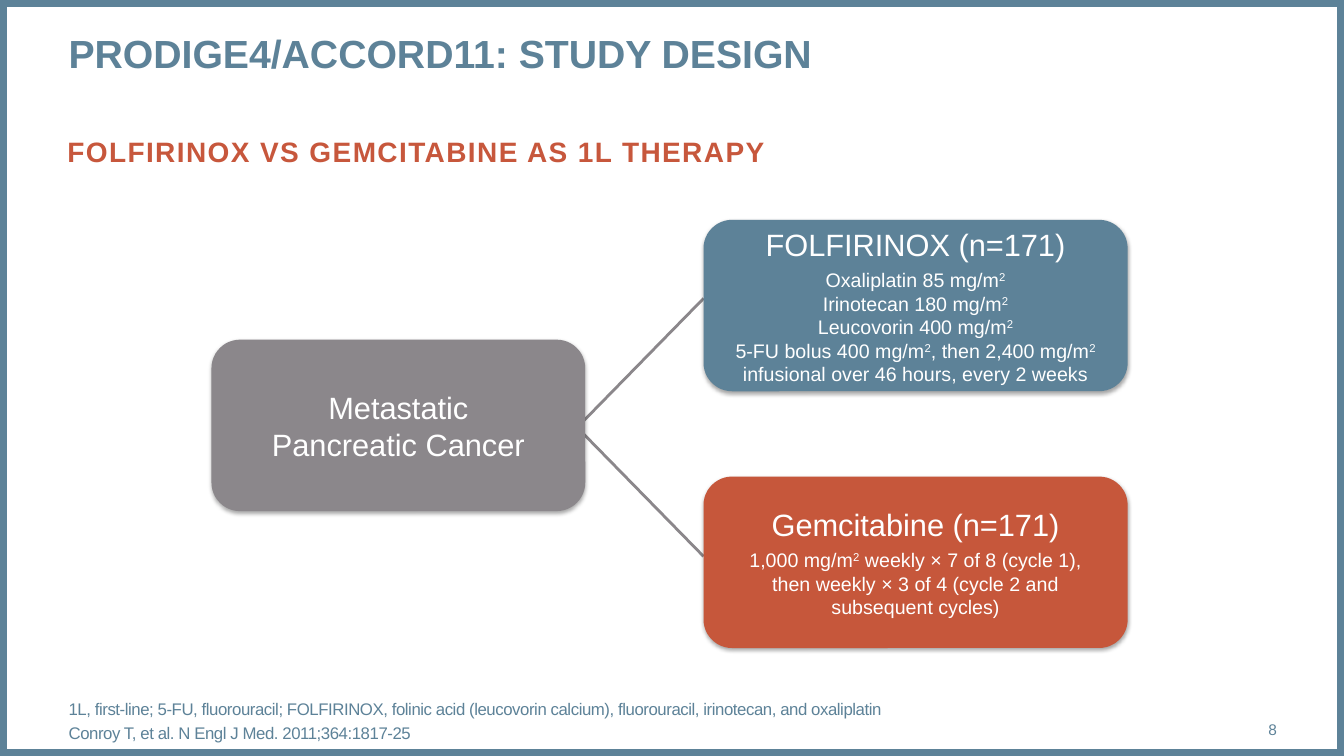
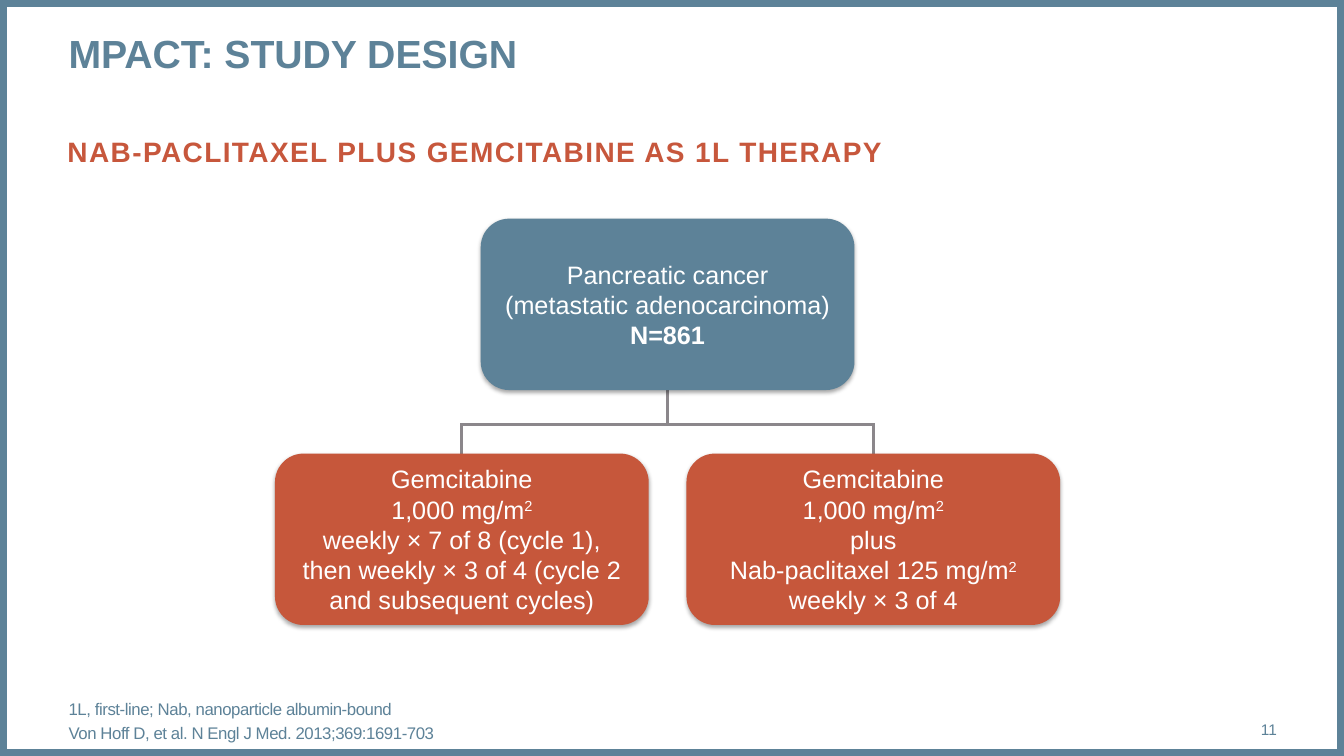
"""Build two study-design slides for pancreatic cancer trials."""
import pptx
import pptx.dml.color
import pptx.enum.shapes
import pptx.enum.text
import pptx.oxml
import pptx.oxml.ns
import pptx.util

Cm, Pt = pptx.util.Cm, pptx.util.Pt
ALIGN, ANCHOR = pptx.enum.text.PP_ALIGN, pptx.enum.text.MSO_ANCHOR
SHAPE = pptx.enum.shapes.MSO_SHAPE
hex_color = pptx.dml.color.RGBColor.from_string

BLUE, RUST, HEADING, GRAY, WHITE = "5D8298", "C6573B", "C7573C", "8B878B", "FFFFFF"
WIDTH, HEIGHT = 33.87, 19.05
BOX_WIDTH, ARM_WIDTH, BOX_HEIGHT = 9.42, 10.69, 4.32
SHADOW = (
    f"<a:effectLst {pptx.oxml.ns.nsdecls('a')}>"
    '<a:outerShdw blurRad="39370" dist="22860" dir="5400000" rotWithShape="0">'
    '<a:srgbClr val="000000"><a:alpha val="35000"/></a:srgbClr>'
    "</a:outerShdw></a:effectLst>"
)
NO_EFFECT = f"<a:effectLst {pptx.oxml.ns.nsdecls('a')}/>"


def write(frame, lines, size, color, align=ALIGN.LEFT, anchor=ANCHOR.MIDDLE, tracking=0):
    """Write (text, style) lines, where text between carets is superscript."""
    frame.word_wrap = True
    frame.vertical_anchor = anchor
    for index, (text, style) in enumerate(lines):
        paragraph = frame.add_paragraph() if index else frame.paragraphs[0]
        paragraph.alignment = align
        paragraph.space_before = Pt(style.get("before", 0))
        for position, part in enumerate(text.split("^")):
            if not part:
                continue
            run = paragraph.add_run()
            run.text = part
            run.font.name = "Arial"
            run.font.size = Pt(style.get("size", size))
            run.font.bold = style.get("bold", False)
            run.font.color.rgb = hex_color(color)
            if position % 2:
                run.font._element.set("baseline", "30000")
            if tracking:
                run.font._element.set("spc", str(tracking))


def add_label(slide, left, top, width, height, lines, size, color, **layout):
    """Add a text box without margins."""
    frame = slide.shapes.add_textbox(Cm(left), Cm(top), Cm(width), Cm(height)).text_frame
    frame.margin_left = frame.margin_top = frame.margin_right = frame.margin_bottom = 0
    write(frame, lines, size, color, **layout)


DOSE = {"size": 14}
FIRST_DOSE = {"size": 14, "before": 4}
BOLD = {"bold": True}

arm_left = 17.73
single_lefts = [6.93, 17.3]
single_centers = [left + BOX_WIDTH / 2 for left in single_lefts]
trunk = sum(single_centers) / 2
branch_top, branch_bottom = 10.69, 11.6

studies = [
    {
        "title": "PRODIGE4/ACCORD11: STUDY DESIGN",
        "heading": "FOLFIRINOX VS GEMCITABINE AS 1L THERAPY",
        "notes": [
            "1L, first-line; 5-FU, fluorouracil; FOLFIRINOX, folinic acid (leucovorin calcium), "
            "fluorouracil, irinotecan, and oxaliplatin",
            "Conroy T, et al. N Engl J Med. 2011;364:1817-25",
        ],
        "number": "8",
        "size": 22,
        "links": [
            (14.35, 10.97, arm_left, 7.52),
            (14.35, 10.57, arm_left, 14.02),
        ],
        "groups": [
            (5.33, 8.56, BOX_WIDTH, GRAY, [("Metastatic", {}), ("Pancreatic Cancer", {})]),
            (arm_left, 12.01, ARM_WIDTH, RUST, [
                ("Gemcitabine (n=171)", {}),
                ("1,000 mg/m^2^ weekly × 7 of 8 (cycle 1),", FIRST_DOSE),
                ("then weekly × 3 of 4 (cycle 2 and subsequent cycles)", DOSE),
            ]),
            (arm_left, 5.54, ARM_WIDTH, BLUE, [
                ("FOLFIRINOX (n=171)", {}),
                ("Oxaliplatin 85 mg/m^2^", FIRST_DOSE),
                ("Irinotecan 180 mg/m^2^", DOSE),
                ("Leucovorin 400 mg/m^2^", DOSE),
                ("5-FU bolus 400 mg/m^2^, then 2,400 mg/m^2^", DOSE),
                ("infusional over 46 hours, every 2 weeks", DOSE),
            ]),
        ],
    },
    {
        "title": "MPACT: STUDY DESIGN",
        "heading": "NAB-PACLITAXEL PLUS GEMCITABINE AS 1L THERAPY",
        "notes": [
            "1L, first-line; Nab, nanoparticle albumin-bound",
            "Von Hoff D, et al. N Engl J Med. 2013;369:1691-703",
        ],
        "number": "11",
        "size": 18,
        "links": [
            (trunk, 9.53, trunk, branch_top),
            (single_centers[0], branch_top, single_centers[1], branch_top),
            *[(x, branch_top - 0.03, x, branch_bottom) for x in single_centers],
        ],
        "groups": [
            (single_lefts[0], 11.43, BOX_WIDTH, RUST, [
                ("Gemcitabine", {}),
                ("1,000 mg/m^2^", {}),
                ("weekly × 7 of 8 (cycle 1),", {}),
                ("then weekly × 3 of 4 (cycle 2 and subsequent cycles)", {}),
            ]),
            (single_lefts[1], 11.43, BOX_WIDTH, RUST, [
                ("Gemcitabine", {}),
                ("1,000 mg/m^2^", {}),
                ("plus", {}),
                ("Nab-paclitaxel 125 mg/m^2^", {}),
                ("weekly × 3 of 4", {}),
            ]),
            (trunk - BOX_WIDTH / 2, 5.51, BOX_WIDTH, BLUE, [
                ("Pancreatic cancer", {}),
                ("(metastatic adenocarcinoma)", {}),
                ("N=861", BOLD),
            ]),
        ],
    },
]

deck = pptx.Presentation()
deck.slide_width, deck.slide_height = Cm(WIDTH), Cm(HEIGHT)

for study in studies:
    slide = deck.slides.add_slide(deck.slide_layouts[6])

    border = slide.shapes.add_shape(SHAPE.RECTANGLE, 0, 0, Cm(WIDTH), Cm(HEIGHT))
    border.shadow.inherit = False
    border.fill.background()
    border.line.color.rgb = hex_color(BLUE)
    border.line.width = Pt(10)

    add_label(slide, 1.73, 0.75, 30.45, 2.39, [(study["title"], BOLD)], 28, BLUE,
              anchor=ANCHOR.TOP)
    add_label(slide, 1.7, 3.4, 30.48, 1.96, [(study["heading"], BOLD)], 20, HEADING,
              anchor=ANCHOR.TOP, tracking=100)
    notes = [(note, {"before": 3 if index else 0}) for index, note in enumerate(study["notes"])]
    add_label(slide, 1.73, 17.65, 28.27, 1.02, notes, 12, BLUE, tracking=-30)
    add_label(slide, 30, 17.86, 2.18, 1.02, [(study["number"], {})], 11, BLUE,
              align=ALIGN.RIGHT)

    for ends in study["links"]:
        link = slide.shapes.add_connector(
            pptx.enum.shapes.MSO_CONNECTOR.STRAIGHT, *[Cm(end) for end in ends])
        link.line.color.rgb = hex_color(GRAY)
        link.line.width = Pt(2)
        link._element.spPr.append(pptx.oxml.parse_xml(NO_EFFECT))

    for left, top, width, color, lines in study["groups"]:
        group = slide.shapes.add_shape(
            SHAPE.ROUNDED_RECTANGLE, Cm(left), Cm(top), Cm(width), Cm(BOX_HEIGHT))
        group.fill.solid()
        group.fill.fore_color.rgb = hex_color(color)
        group.line.fill.background()
        group._element.spPr.append(pptx.oxml.parse_xml(SHADOW))
        write(group.text_frame, lines, study["size"], WHITE, align=ALIGN.CENTER)

deck.save("out.pptx")
